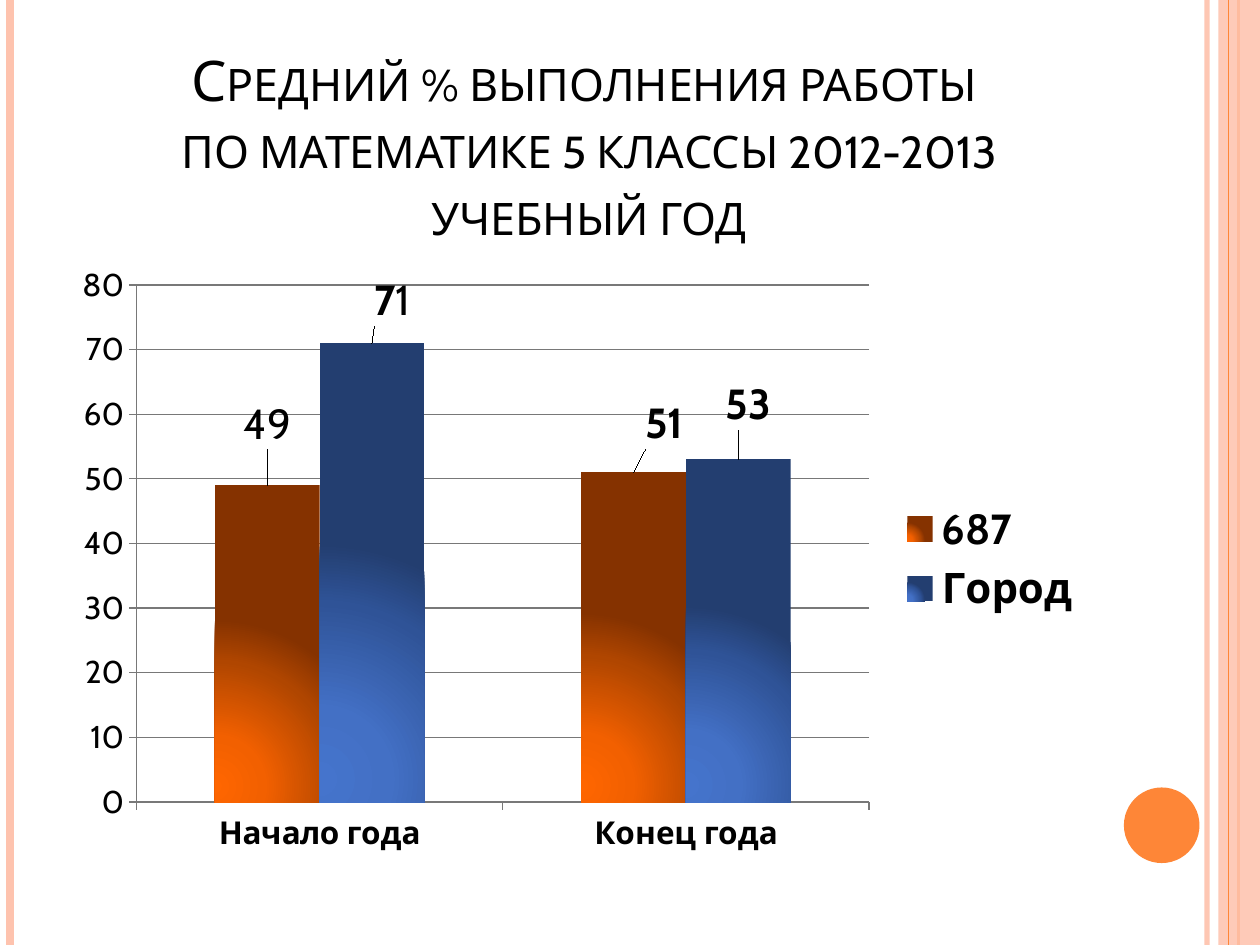
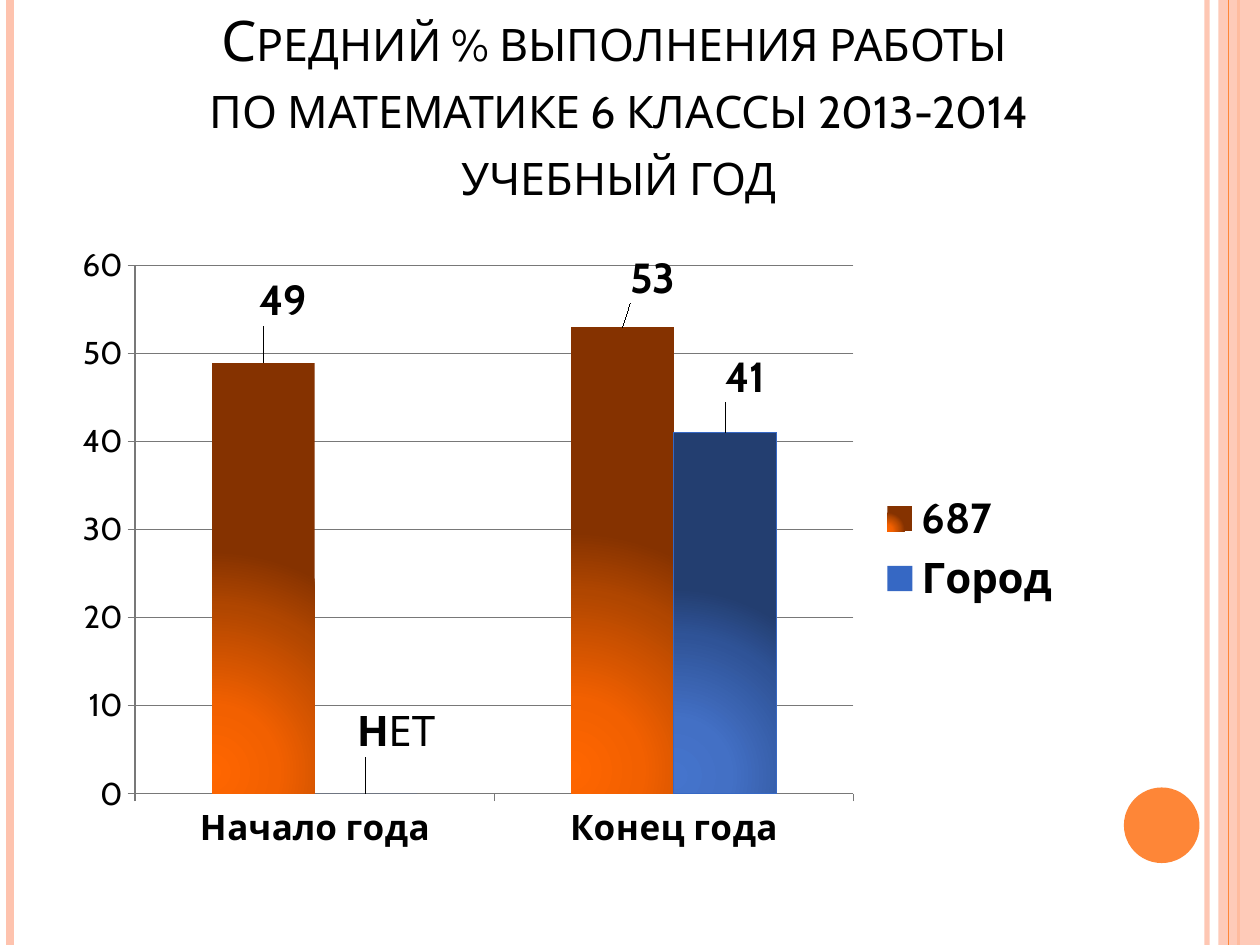
"""Builds two slides comparing average maths results at the start and end of the year."""
import lxml.etree
import pptx
import pptx.chart.data
import pptx.dml.color
import pptx.enum.chart
import pptx.enum.shapes
import pptx.enum.text
import pptx.oxml
import pptx.oxml.ns
import pptx.util

Inches, Pt = pptx.util.Inches, pptx.util.Pt
RGBColor = pptx.dml.color.RGBColor
qn = pptx.oxml.ns.qn

BLACK = RGBColor(0x00, 0x00, 0x00)
WHITE = RGBColor(0xFF, 0xFF, 0xFF)
GRID = RGBColor(0x78, 0x78, 0x78)
PEACH = RGBColor(0xFE, 0xC3, 0xAE)
ORANGE = RGBColor(0xFE, 0x86, 0x37)
BLUE = RGBColor(0x36, 0x68, 0xC4)
ORANGE_GLOW = [(0, "FF6600"), (30, "F26000"), (75, "B04600"), (100, "853200")]
BLUE_GLOW = [(0, "4574CC"), (30, "4370C5"), (75, "2F5397"), (100, "233E70")]
FONT = "Cabin"

TERMS = ["Начало года", "Конец года"]

# Each label: (offset x, offset y, custom pieces as (text, bold) or None for the value)
SLIDES = [
    {
        "title": "Средний % выполнения работы \vпо математике 5 классы 2012-2013 учебный год",
        "title_at": (0.59, 0.76, 8.17, 1.25),
        "chart_at": (0.51, 2.02, 8.19, 4.83),
        "plot_at": (0.07, 0.05, 0.71, 0.85),
        "top_value": 80,
        "term_size": 18,
        "series": [
            {"name": "687", "values": [49, 51], "glow": ORANGE_GLOW,
             "labels": [(0, -0.05, [("49", False)]), (0.03, -0.03, None)]},
            {"name": "Город", "values": [71, 53], "glow": BLUE_GLOW,
             "labels": [(0.02, -0.02, [("7", True), ("1", False)]), (0.01, -0.04, None)]},
        ],
    },
    {
        "title": "Средний % выполнения работы \vпо математике 6 классы 2013-2014 учебный год",
        "title_at": (0.83, 0.44, 8.17, 1.25),
        "chart_at": (0.51, 1.86, 8.03, 4.99),
        "plot_at": (0.07, 0.05, 0.71, 0.84),
        "top_value": 60,
        "term_size": 20,
        "series": [
            {"name": "687", "values": [49, 53], "glow": ORANGE_GLOW,
             "labels": [(0.02, -0.05, None), (0.03, -0.03, None)]},
            {"name": "Город", "values": [0, 41], "color": BLUE, "point_glows": {1: BLUE_GLOW},
             "labels": [(0.03, -0.05, [("Н", True), ("ЕТ", False)]), (0.02, -0.04, None)]},
        ],
    },
]

STRIPES = [(9.58, PEACH, 3, 93), (0.08, PEACH, 4.5, 100), (9.83, ORANGE, 1.5, 100)]
THIN_STRIPE = (9.75, ORANGE, 0.75, 100)


def style_font(font, size, bold=False):
    font.name, font.size, font.bold = FONT, Pt(size), bold
    font.color.rgb = BLACK


def write(frame, pieces, size, small_caps=False, align=pptx.enum.text.PP_ALIGN.CENTER):
    paragraph = frame.paragraphs[0]
    paragraph.alignment = align
    for text, bold in pieces:
        for index, line in enumerate(text.split("\v")):
            if index:
                paragraph.add_line_break()
            run = paragraph.add_run()
            run.text = line
            style_font(run.font, size, bold)
            if small_caps:
                run.font._element.set("cap", "small")


def set_alpha(element, percent):
    color = next(element.iter(qn("a:srgbClr")))
    lxml.etree.SubElement(color, qn("a:alpha")).set("val", str(percent * 1000))


def add_stripe(slide, x, color, width, alpha):
    stripe = slide.shapes.add_connector(
        pptx.enum.shapes.MSO_CONNECTOR.STRAIGHT, Inches(x), 0, Inches(x), Inches(7.5))
    stripe.line.color.rgb = color
    stripe.line.width = Pt(width)
    if alpha < 100:
        set_alpha(stripe._element.spPr, alpha)
    lxml.etree.SubElement(stripe._element.spPr, qn("a:effectLst"))


def add_plain(slide, kind, box, color):
    shape = slide.shapes.add_shape(kind, *map(Inches, box))
    shape.shadow.inherit = False
    shape.fill.solid()
    shape.fill.fore_color.rgb = color
    shape.line.fill.background()
    return shape


def add_frame(slide):
    slide.background.fill.solid()
    slide.background.fill.fore_color.rgb = WHITE
    for stripe in STRIPES:
        add_stripe(slide, *stripe)
    kinds = pptx.enum.shapes.MSO_SHAPE
    band = add_plain(slide, kinds.RECTANGLE, (9.67, 0, 0.33, 7.5), PEACH)
    set_alpha(band._element.spPr, 87)
    add_stripe(slide, *THIN_STRIPE)
    add_plain(slide, kinds.OVAL, (8.92, 6.25, 0.6, 0.6), ORANGE)


def add_title(slide, text, box):
    frame = slide.shapes.add_textbox(*map(Inches, box)).text_frame
    frame.word_wrap = True
    frame.vertical_anchor = pptx.enum.text.MSO_ANCHOR.BOTTOM
    write(frame, [(text, False)], 32, small_caps=True)


def glow_fill(chart_format, stops):
    chart_format.fill.solid()
    solid = next(chart_format._element.iter(qn("a:solidFill")))
    marks = "".join(f'<a:gs pos="{at * 1000}"><a:srgbClr val="{color}"/></a:gs>'
                    for at, color in stops)
    gradient = pptx.oxml.parse_xml(
        f'<a:gradFill {pptx.oxml.ns.nsdecls("a")} rotWithShape="1"><a:gsLst>{marks}</a:gsLst>'
        '<a:path path="circle"><a:fillToRect l="5000" t="100000" r="120000" b="10000"/>'
        '</a:path></a:gradFill>')
    solid.getparent().replace(solid, gradient)


def manual_layout(x, y, w=None, h=None):
    inner = {"x": x, "y": y}
    if w:
        inner = {"layoutTarget": "inner", "xMode": "edge", "yMode": "edge", **inner, "w": w, "h": h}
    parts = "".join(f'<c:{name} val="{value}"/>' for name, value in inner.items())
    return pptx.oxml.parse_xml(
        f'<c:layout {pptx.oxml.ns.nsdecls("c")}><c:manualLayout>{parts}</c:manualLayout></c:layout>')


def label_point(point, x, y, pieces):
    label = point.data_label
    if pieces:
        write(label.text_frame, pieces, 24)
    else:
        style_font(label.font, 24, True)
    label.position = pptx.enum.chart.XL_LABEL_POSITION.OUTSIDE_END
    label._dLbl.insert(1, manual_layout(x, y))


def style_series(series, content):
    if "glow" in content:
        glow_fill(series.format, content["glow"])
    else:
        series.format.fill.solid()
        series.format.fill.fore_color.rgb = content["color"]
    for index, stops in content.get("point_glows", {}).items():
        point = series.points[index]
        glow_fill(point.format, stops)
        point.format.line.color.rgb = content["color"]
    for index, label in enumerate(content["labels"]):
        label_point(series.points[index], *label)


def add_results(slide, content):
    results = pptx.chart.data.CategoryChartData()
    results.categories = TERMS
    for series in content["series"]:
        results.add_series(series["name"], series["values"])
    enums = pptx.enum.chart
    chart = slide.shapes.add_chart(
        enums.XL_CHART_TYPE.COLUMN_CLUSTERED, *map(Inches, content["chart_at"]), results).chart
    style_font(chart.font, 18)
    chart.has_title = False
    chart.has_legend = True
    chart.legend.position = enums.XL_LEGEND_POSITION.RIGHT
    chart.legend.include_in_layout = False
    style_font(chart.legend.font, 24, True)

    terms, percent = chart.category_axis, chart.value_axis
    style_font(terms.tick_labels.font, content["term_size"], True)
    percent.minimum_scale, percent.maximum_scale = 0, content["top_value"]
    percent.major_unit = 10
    percent.has_major_gridlines = True
    for axis in (terms, percent):
        axis.major_tick_mark = enums.XL_TICK_MARK.OUTSIDE
    for line in (terms.format.line, percent.format.line, percent.major_gridlines.format.line):
        line.color.rgb = GRID
        line.width = Pt(0.75)

    plot = chart.plots[0]
    plot.gap_width, plot.overlap, plot.vary_by_categories = 150, 0, False
    for series, series_content in zip(plot.series, content["series"]):
        style_series(series, series_content)
    area = chart._chartSpace.chart.plotArea
    for layout in area.findall(qn("c:layout")):
        area.remove(layout)
    area.insert(0, manual_layout(*content["plot_at"]))


def main():
    deck = pptx.Presentation()
    deck.slide_width, deck.slide_height = Inches(10), Inches(7.5)
    for content in SLIDES:
        slide = deck.slides.add_slide(deck.slide_layouts[6])
        add_frame(slide)
        add_title(slide, content["title"], content["title_at"])
        add_results(slide, content)
    deck.save("out.pptx")


if __name__ == "__main__":
    main()
